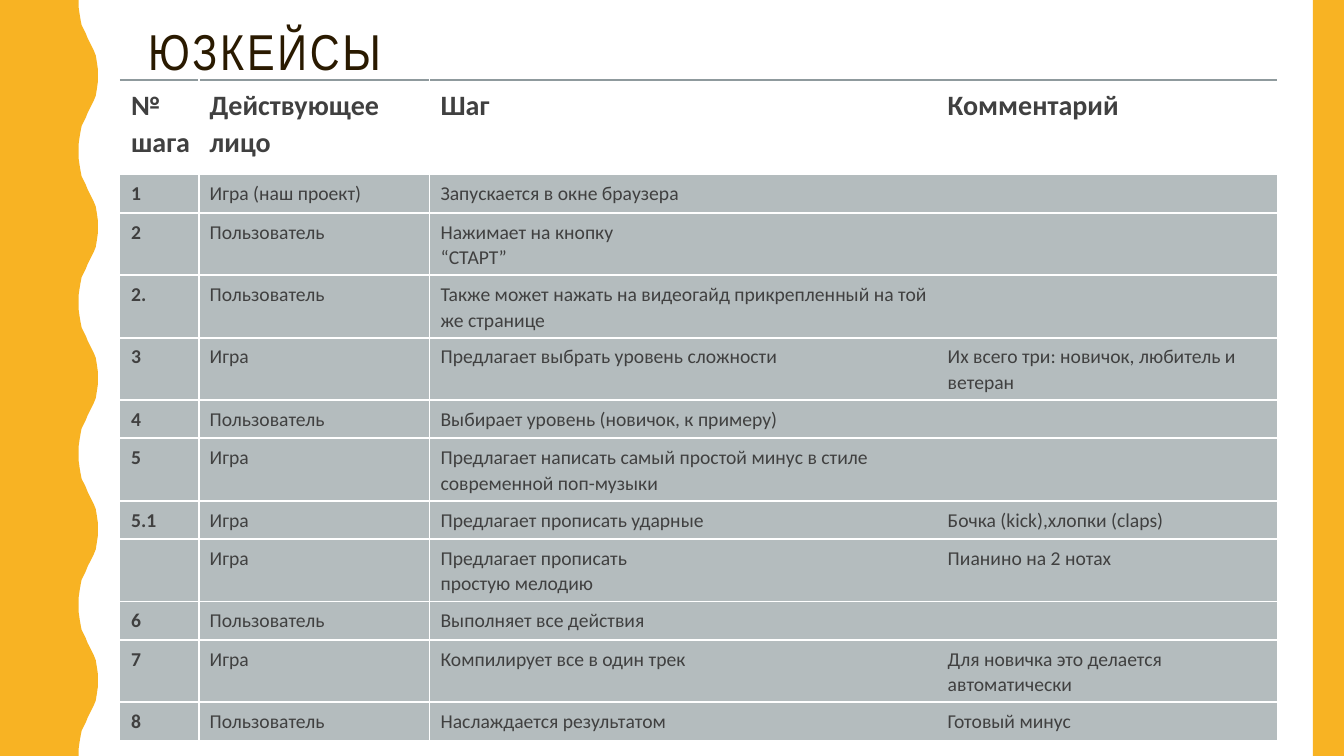
"""Build the slide with the table of use case steps."""
import dataclasses
import typing

import lxml.etree
import pptx
import pptx.dml.color
import pptx.enum.shapes
import pptx.enum.text
import pptx.oxml.ns
import pptx.util

Inches = pptx.util.Inches
qn = pptx.oxml.ns.qn


@dataclasses.dataclass(frozen=True)
class Theme:
    """Colours, fonts and type sizes of the slide."""
    gold: str = "F8B323"
    white: str = "FFFFFF"
    brown: str = "2A1A00"
    ink: str = "404040"
    rule: str = "8F9A9D"
    cell: str = "B4BCBE"
    head: str = "Arial Narrow"
    body: str = "Calibri"
    title: float = 36
    label: float = 20
    text: float = 14
    line: float = 1.5
    pale: int = 20
    deep: int = 35


@dataclasses.dataclass(frozen=True)
class Panel:
    """A plain filled rectangle, in inches."""
    left: float
    top: float
    width: float
    height: float
    fill: str


@dataclasses.dataclass(frozen=True)
class Step:
    """One row of the table."""
    number: str
    actor: str
    action: str
    note: str = ""
    height: float = 0.38


THEME = Theme()
WIDE, HIGH = 13.33, 7.5
TALL = 0.62
HALF = 0.75
COLS = (0.78, 2.29, 5.03, 3.38)
CURVE = ((0, 0.78), (0.07, 0.78), (0.14, 0.79), (0.2, 0.8), (0.25, 0.81),
         (0.29, 0.83), (0.33, 0.85), (0.38, 0.87), (0.42, 0.89), (0.46, 0.91),
         (0.5, 0.93), (0.55, 0.95), (0.61, 0.96), (0.68, 0.97))
PAGE = Panel(0, 0, WIDE, HIGH, THEME.white)
STRIP = Panel(13.02, 0, 0.31, HIGH, THEME.gold)
STEPS = (
    Step("№ шага", "Действующее лицо", "Шаг", "Комментарий", 0.94),
    Step("1", "Игра (наш проект)", "Запускается в окне браузера"),
    Step("2", "Пользователь", "Нажимает на кнопку\n“СТАРТ”", height=TALL),
    Step("2.", "Пользователь",
         "Также может нажать на видеогайд прикрепленный на той же странице",
         height=TALL),
    Step("3", "Игра", "Предлагает выбрать уровень сложности",
         "Их всего три: новичок, любитель и ветеран", TALL),
    Step("4", "Пользователь", "Выбирает уровень (новичок, к примеру)"),
    Step("5", "Игра",
         "Предлагает написать самый простой минус в стиле современной поп-музыки",
         height=TALL),
    Step("5.1", "Игра", "Предлагает прописать ударные",
         "Бочка (kick),хлопки (claps)"),
    Step("", "Игра", "Предлагает прописать\nпростую мелодию",
         "Пианино на 2 нотах", TALL),
    Step("6", "Пользователь", "Выполняет все действия"),
    Step("7", "Игра", "Компилирует все в один трек",
         "Для новичка это делается автоматически", TALL),
    Step("8", "Пользователь", "Наслаждается результатом", "Готовый минус"),
)


def rgb(code: str) -> pptx.dml.color.RGBColor:
    """Turn a hex code into a colour."""
    return pptx.dml.color.RGBColor.from_string(code)


def write(frame: typing.Any, text: str, *, size: float, font: str, color: str,
          bold: bool = False, space: float = 1.0, track: int = 0) -> None:
    """Write text into a frame, one paragraph a line."""
    frame.word_wrap = True
    for index, line in enumerate(text.split("\n")):
        para = frame.add_paragraph() if index else frame.paragraphs[0]
        para.line_spacing = space
        if not line:
            end = lxml.etree.SubElement(para._p, qn("a:endParaRPr"))
            end.set("sz", str(int(size * 100)))
            continue
        run = para.add_run()
        run.text = line
        run.font.size = pptx.util.Pt(size)
        run.font.name = font
        run.font.bold = bold
        run.font.color.rgb = rgb(color)
        if track:
            run.font._element.set("spc", str(track))


def paint(shape: typing.Any, color: str) -> None:
    """Give a shape a flat fill without line or shadow."""
    shape.shadow.inherit = False
    shape.fill.solid()
    shape.fill.fore_color.rgb = rgb(color)
    shape.line.fill.background()


def block(shapes: typing.Any, panel: Panel) -> None:
    """Draw a panel."""
    kind = pptx.enum.shapes.MSO_SHAPE.RECTANGLE
    sides = (panel.left, panel.top, panel.width, panel.height)
    paint(shapes.add_shape(kind, *map(Inches, sides)), panel.fill)


def wave(shapes: typing.Any) -> None:
    """Draw the wavy band at the left edge."""
    edge = []
    for turn in range(round(HIGH / HALF)):
        if turn % 2:
            edge.append((0.97, turn * HALF))
            edge += [(x, (turn + 1) * HALF - y) for y, x in reversed(CURVE)]
        else:
            edge += [(x, turn * HALF + y) for y, x in CURVE]
    edge.append((0, HIGH))
    pen = shapes.build_freeform(0, 0, scale=1.0)
    pen.add_line_segments([(Inches(x), Inches(y)) for x, y in edge], close=True)
    paint(pen.convert_to_shape(), THEME.gold)


def border(cell: typing.Any, sides: dict[str, str]) -> None:
    """Add cell borders, given in the order L, R, T, B."""
    props = cell._tc.get_or_add_tcPr()
    for side, color in sides.items():
        line = lxml.etree.SubElement(props, qn(f"a:ln{side}"))
        line.set("w", str(pptx.util.Pt(THEME.line)))
        fill = lxml.etree.SubElement(line, qn("a:solidFill"))
        lxml.etree.SubElement(fill, qn("a:srgbClr")).set("val", color)


def shade(cell: typing.Any, alpha: int) -> None:
    """Fill a cell with the table tint at a percentage of opacity."""
    cell.fill.solid()
    cell.fill.fore_color.rgb = rgb(THEME.cell)
    tint = cell._tc.tcPr.find(".//" + qn("a:srgbClr"))
    lxml.etree.SubElement(tint, qn("a:alpha")).set("val", str(alpha * 1000))


def dress(cell: typing.Any, text: str, row: int, col: int) -> None:
    """Fill in and format one cell."""
    head = row == 0
    pad = Inches(0.07 if head else 0.06)
    cell.margin_left = Inches(0.11)
    cell.margin_right = cell.margin_top = cell.margin_bottom = pad
    write(cell.text_frame, text, size=THEME.label if head else THEME.text,
          font=THEME.body, color=THEME.ink, bold=head or col == 0, space=1.07)
    sides = {0: {"R": THEME.white}, 1: {"L": THEME.white}}.get(col, {})
    border(cell, sides | {"T": THEME.rule if head else THEME.white,
                          "B": THEME.white})
    if head:
        cell.fill.background()
    else:
        shade(cell, THEME.deep if col else THEME.pale)


def grid(shapes: typing.Any) -> None:
    """Draw the table of steps."""
    high = sum(step.height for step in STEPS)
    table = shapes.add_table(len(STEPS), len(COLS), Inches(1.19), Inches(0.79),
                             Inches(sum(COLS)), Inches(high)).table
    table.first_row = table.horz_banding = False
    style = table._tbl.tblPr.find(qn("a:tableStyleId"))
    style.text = "{2D5ABB26-0587-4C30-8999-92F81FD0307C}"
    for col, width in enumerate(COLS):
        table.columns[col].width = Inches(width)
    for row, step in enumerate(STEPS):
        table.rows[row].height = Inches(step.height)
        for col, text in enumerate((step.number, step.actor, step.action, step.note)):
            dress(table.cell(row, col), text, row, col)


def main() -> None:
    """Build and save the slide."""
    deck = pptx.Presentation()
    deck.slide_width, deck.slide_height = Inches(WIDE), Inches(HIGH)
    shapes = deck.slides.add_slide(deck.slide_layouts[6]).shapes
    block(shapes, PAGE)
    title = shapes.add_textbox(*map(Inches, (1.37, 0.1, 2.67, 0.88))).text_frame
    title.vertical_anchor = pptx.enum.text.MSO_ANCHOR.MIDDLE
    write(title, "ЮЗКЕЙСЫ", size=THEME.title, font=THEME.head,
          color=THEME.brown, space=0.9, track=200)
    wave(shapes)
    block(shapes, STRIP)
    grid(shapes)
    deck.save("out.pptx")


if __name__ == "__main__":
    main()
